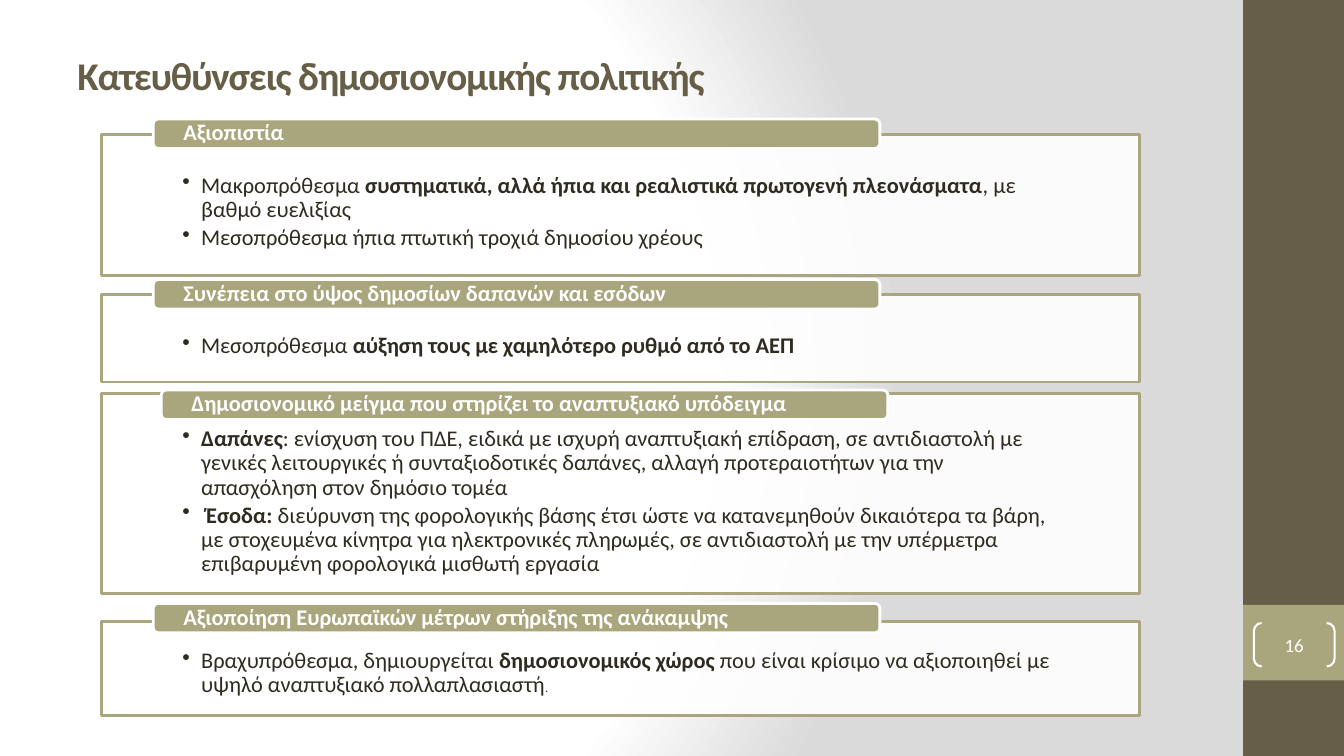
from dataclasses import dataclass

from pptx import Presentation
from pptx.dml.color import RGBColor
from pptx.enum import shapes, text
from pptx.oxml import ns, parse_xml
from pptx.util import Pt

WHITE = RGBColor(0xFF, 0xFF, 0xFF)
BROWN = RGBColor(0x67, 0x5E, 0x47)
OLIVE = RGBColor(0xA9, 0xA5, 0x7C)
INK = RGBColor(0x2F, 0x2B, 0x20)
FONT = "Calibri"
SIZE = 16
PANEL_LEFT, PANEL_WIDTH, PANEL_INSET = 72.7, 741, 57.5
LABEL_WIDTH, LABEL_HEIGHT, LABEL_INSET = 519, 21, 20.5
BULLET_INDENT = 13.5
BAR_LEFT, BAR_WIDTH = 888, 72

BACKGROUND = f"""
<p:bg {ns.nsdecls('p', 'a')}><p:bgPr><a:gradFill rotWithShape="1"><a:gsLst>
<a:gs pos="0"><a:srgbClr val="FFFFFF"/></a:gs>
<a:gs pos="75000"><a:srgbClr val="FFFFFF"/></a:gs>
<a:gs pos="100000"><a:srgbClr val="DADADA"/></a:gs>
</a:gsLst><a:path path="circle">
<a:fillToRect l="20000" t="50000" r="100000" b="50000"/>
</a:path></a:gradFill><a:effectLst/></p:bgPr></p:bg>"""


@dataclass
class Span:
    text: str
    bold: bool = False
    size: float = SIZE


@dataclass
class Section:
    heading: str
    top: float
    height: float
    label_left: float
    label_top: float
    text_inset: float
    bullets: list[list[Span]]


SECTIONS = [
    Section("Aξιοπιστία", 95.8, 100.8, 109.5, 85, 28.5, [
        [Span("Μακροπρόθεσμα "),
         Span("συστηματικά, αλλά ήπια και ρεαλιστικά πρωτογενή πλεονάσματα", True),
         Span(", με βαθμό ευελιξίας")],
        [Span("Μεσοπρόθεσμα ήπια πτωτική τροχιά δημοσίου χρέους")],
    ]),
    Section("Συνέπεια στο ύψος δημοσίων δαπανών και εσόδων", 210.3, 62.6, 109.5, 199.7, 28.5, [
        [Span("Μεσοπρόθεσμα "),
         Span("αύξηση τους με χαμηλότερο ρυθμό από το ΑΕΠ", True)],
    ]),
    Section("Δημοσιονομικό μείγμα που στηρίζει το αναπτυξιακό υπόδειγμα",
            280.8, 143.3, 115.2, 278.6, 24.5, [
        [Span("Δαπάνες", True),
         Span(": ενίσχυση του ΠΔΕ, ειδικά με ισχυρή αναπτυξιακή επίδραση, σε αντιδιαστολή με "
              "γενικές λειτουργικές ή συνταξιοδοτικές δαπάνες, αλλαγή προτεραιοτήτων για την "
              "απασχόληση στον δημόσιο τομέα")],
        [Span(" Έσοδα: ", True),
         Span("διεύρυνση της φορολογικής βάσης έτσι ώστε να κατανεμηθούν δικαιότερα τα βάρη, "
              "με στοχευμένα κίνητρα για ηλεκτρονικές πληρωμές, σε αντιδιαστολή με την υπέρμετρα "
              "επιβαρυμένη φορολογικά μισθωτή εργασία")],
    ]),
    Section("Αξιοποίηση Ευρωπαϊκών μέτρων στήριξης της ανάκαμψης", 444.2, 67, 109.5, 431, 19.5, [
        [Span("Βραχυπρόθεσμα, δημιουργείται "),
         Span("δημοσιονομικός χώρος", True),
         Span(" που είναι κρίσιμο να αξιοποιηθεί με υψηλό αναπτυξιακό πολλαπλασιαστή"),
         Span(".", size=9)],
    ]),
]


def add_box(s, kind, left: float, top: float, width: float, height: float,
            fill: RGBColor | None = None, line: RGBColor | None = None, weight: float = 2):
    sp = s.shapes.add_shape(kind, Pt(left), Pt(top), Pt(width), Pt(height))
    sp.shadow.inherit = False
    if fill is None:
        sp.fill.background()
    else:
        sp.fill.solid()
        sp.fill.fore_color.rgb = fill
    if line is None:
        sp.line.fill.background()
    else:
        sp.line.color.rgb = line
        sp.line.width = Pt(weight)
    return sp


def set_frame(tf, anchor, side: float = 0, top: float = 0) -> None:
    tf.word_wrap = True
    tf.vertical_anchor = anchor
    tf.margin_left = tf.margin_right = Pt(side)
    tf.margin_top, tf.margin_bottom = Pt(top), 0


def format_run(r, color: RGBColor, size: float = SIZE, bold: bool = False) -> None:
    r.font.name = FONT
    r.font.size = Pt(size)
    r.font.bold = bold
    r.font.color.rgb = color


def add_bullet(p, spans: list[Span]) -> None:
    p.alignment = text.PP_ALIGN.LEFT
    p.line_spacing = 0.9
    p.space_after = Pt(2.9)
    pPr = p._p.get_or_add_pPr()
    pPr.set("marL", str(Pt(BULLET_INDENT)))
    pPr.set("indent", str(-Pt(BULLET_INDENT)))
    pPr.append(parse_xml(f'<a:buChar {ns.nsdecls("a")} char="•"/>'))
    for span in spans:
        r = p.add_run()
        r.text = span.text
        format_run(r, INK, span.size, span.bold)


def add_section(s, section: Section) -> None:
    panel = add_box(s, shapes.MSO_SHAPE.RECTANGLE, PANEL_LEFT, section.top,
                    PANEL_WIDTH, section.height, WHITE, OLIVE)
    color = panel.fill._xPr.find(ns.qn("a:solidFill"))[0]
    color.append(parse_xml(f'<a:alpha {ns.nsdecls("a")} val="90000"/>'))
    tf = panel.text_frame
    set_frame(tf, text.MSO_ANCHOR.TOP, PANEL_INSET, section.text_inset)
    for i, spans in enumerate(section.bullets):
        add_bullet(tf.add_paragraph() if i else tf.paragraphs[0], spans)

    label = add_box(s, shapes.MSO_SHAPE.ROUNDED_RECTANGLE, section.label_left,
                    section.label_top, LABEL_WIDTH, LABEL_HEIGHT, OLIVE, WHITE)
    set_frame(label.text_frame, text.MSO_ANCHOR.MIDDLE, LABEL_INSET)
    p = label.text_frame.paragraphs[0]
    p.text = section.heading
    p.alignment = text.PP_ALIGN.LEFT
    p.line_spacing = 0.9
    format_run(p.runs[0], WHITE, bold=True)


def add_title(s) -> None:
    title = s.shapes.title
    title.left, title.top, title.width, title.height = Pt(48), Pt(21.6), Pt(800), Pt(63.4)
    title.text_frame.text = "Κατευθύνσεις δημοσιονομικής πολιτικής"
    title.text_frame.vertical_anchor = text.MSO_ANCHOR.MIDDLE
    p = title.text_frame.paragraphs[0]
    p.alignment = text.PP_ALIGN.LEFT
    format_run(p.runs[0], BROWN, 28, True)
    p.runs[0].font._element.set("spc", "-80")


def add_side_bar(s) -> None:
    add_box(s, shapes.MSO_SHAPE.RECTANGLE, BAR_LEFT, 0, BAR_WIDTH, 540, BROWN)
    add_box(s, shapes.MSO_SHAPE.RECTANGLE, BAR_LEFT, 432, BAR_WIDTH, 54, OLIVE)


def add_page_number(s) -> None:
    sp = add_box(s, shapes.MSO_SHAPE.DOUBLE_BRACKET, 895.7, 445, 57.6, 31,
                 line=WHITE, weight=1.5)
    sp.adjustments[0] = 0.18
    set_frame(sp.text_frame, text.MSO_ANCHOR.MIDDLE)
    p = sp.text_frame.paragraphs[0]
    p.text = "16"
    p.alignment = text.PP_ALIGN.CENTER
    format_run(p.runs[0], WHITE, 13.5)


def main() -> None:
    prs = Presentation()
    prs.slide_width, prs.slide_height = Pt(960), Pt(540)
    s = prs.slides.add_slide(prs.slide_layouts[5])
    s._element.cSld.insert(0, parse_xml(BACKGROUND))
    add_side_bar(s)
    add_title(s)
    add_page_number(s)
    for section in SECTIONS:
        add_section(s, section)
    prs.save("out.pptx")


if __name__ == "__main__":
    main()
